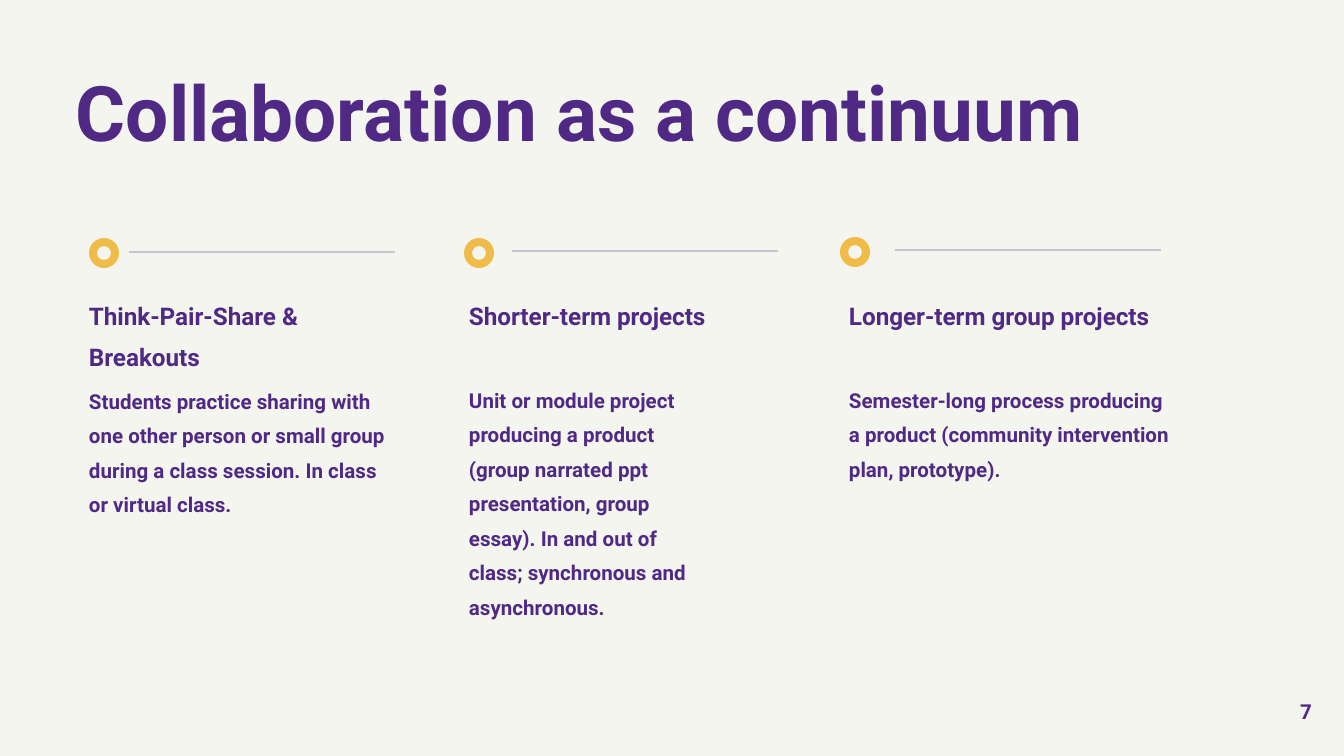
from dataclasses import dataclass

from lxml import etree
from pptx import Presentation
from pptx import util as u
from pptx.dml.color import RGBColor
from pptx.enum import shapes, text
from pptx.oxml.ns import qn

EMU_PER_PX = 914400 / 134.4


@dataclass(frozen=True)
class Theme:
    background: str = "F5F5EF"
    purple: str = "4F2984"
    gold: str = "EFBC49"
    font: str = "Roboto"
    title_size: int = 41
    heading_size: int = 13
    body_size: int = 11
    line_width: float = 0.75
    line_alpha: int = 39


@dataclass(frozen=True)
class Stage:
    heading: str
    body: str
    heading_width: int
    body_width: int
    body_top: int
    ring_left: int
    ring_top: int
    line_left: int
    line_y: int


THEME = Theme()
COLUMN_LEFT, COLUMN_PITCH = 89, 380
HEADING_TOP = 290
RING_SIZE, RING_BAND = 30, 8
LINE_LENGTH = 266

STAGES = [
    Stage("Think-Pair-Share & Breakouts",
          "Students practice sharing with one other person or small group "
          "during a class session. In class or virtual class.",
          323, 305, 379, 89, 238, 129, 252),
    Stage("Shorter-term projects",
          "Unit or module project producing a product (group narrated ppt "
          "presentation, group essay). In and out of class; synchronous and "
          "asynchronous.",
          247, 247, 378, 464, 238, 512, 251),
    Stage("Longer-term group projects",
          "Semester-long process producing a product (community intervention "
          "plan, prototype).",
          327, 327, 378, 840, 237, 895, 250),
]


def px(length):
    return u.Emu(round(length * EMU_PER_PX))


def color(value):
    return RGBColor.from_string(value)


def add_text(slide, words, left, top, width, height, size, spacing=1.0,
             align=text.PP_ALIGN.LEFT, anchor=text.MSO_ANCHOR.TOP):
    box = slide.shapes.add_textbox(px(left), px(top), px(width), px(height))
    frame = box.text_frame
    frame.word_wrap = True
    frame.margin_left = frame.margin_right = 0
    frame.margin_top = frame.margin_bottom = 0
    frame.vertical_anchor = anchor
    frame.text = words
    paragraph = frame.paragraphs[0]
    paragraph.alignment = align
    paragraph.line_spacing = spacing
    font = paragraph.runs[0].font
    font.name = THEME.font
    font.size = u.Pt(size)
    font.bold = True
    font.color.rgb = color(THEME.purple)


def add_ring(slide, left, top):
    ring = slide.shapes.add_shape(shapes.MSO_SHAPE.DONUT, px(left), px(top),
                                  px(RING_SIZE), px(RING_SIZE))
    ring.adjustments[0] = RING_BAND / RING_SIZE
    ring.shadow.inherit = False
    ring.fill.solid()
    ring.fill.fore_color.rgb = color(THEME.gold)
    ring.line.fill.background()


def add_line(slide, left, y):
    """Draw a translucent horizontal line without a shadow."""
    line = slide.shapes.add_connector(shapes.MSO_CONNECTOR.STRAIGHT, px(left),
                                      px(y), px(left + LINE_LENGTH), px(y))
    line.line.width = u.Pt(THEME.line_width)
    line.line.color.rgb = color(THEME.purple)
    properties = line._element.spPr
    fill_color = properties.find(".//" + qn("a:srgbClr"))
    etree.SubElement(fill_color, qn("a:alpha"), val=str(THEME.line_alpha * 1000))
    etree.SubElement(properties, qn("a:effectLst"))


def add_stage(slide, stage, left):
    add_ring(slide, stage.ring_left, stage.ring_top)
    add_line(slide, stage.line_left, stage.line_y)
    add_text(slide, stage.heading, left, HEADING_TOP, stage.heading_width, 82,
             THEME.heading_size, spacing=1.4)
    add_text(slide, stage.body, left, stage.body_top, stage.body_width, 243,
             THEME.body_size, spacing=1.4)


def main():
    presentation = Presentation()
    presentation.slide_width = px(1344)
    presentation.slide_height = px(756)
    slide = presentation.slides.add_slide(presentation.slide_layouts[6])
    slide.background.fill.solid()
    slide.background.fill.fore_color.rgb = color(THEME.background)

    add_text(slide, "Collaboration as a continuum", 76, 75, 1211, 106,
             THEME.title_size, spacing=0.9)
    for index, stage in enumerate(STAGES):
        add_stage(slide, stage, COLUMN_LEFT + index * COLUMN_PITCH)
    add_text(slide, "7", 1231, 698, 81, 27, THEME.body_size,
             align=text.PP_ALIGN.RIGHT, anchor=text.MSO_ANCHOR.MIDDLE)

    presentation.save("out.pptx")


if __name__ == "__main__":
    main()
